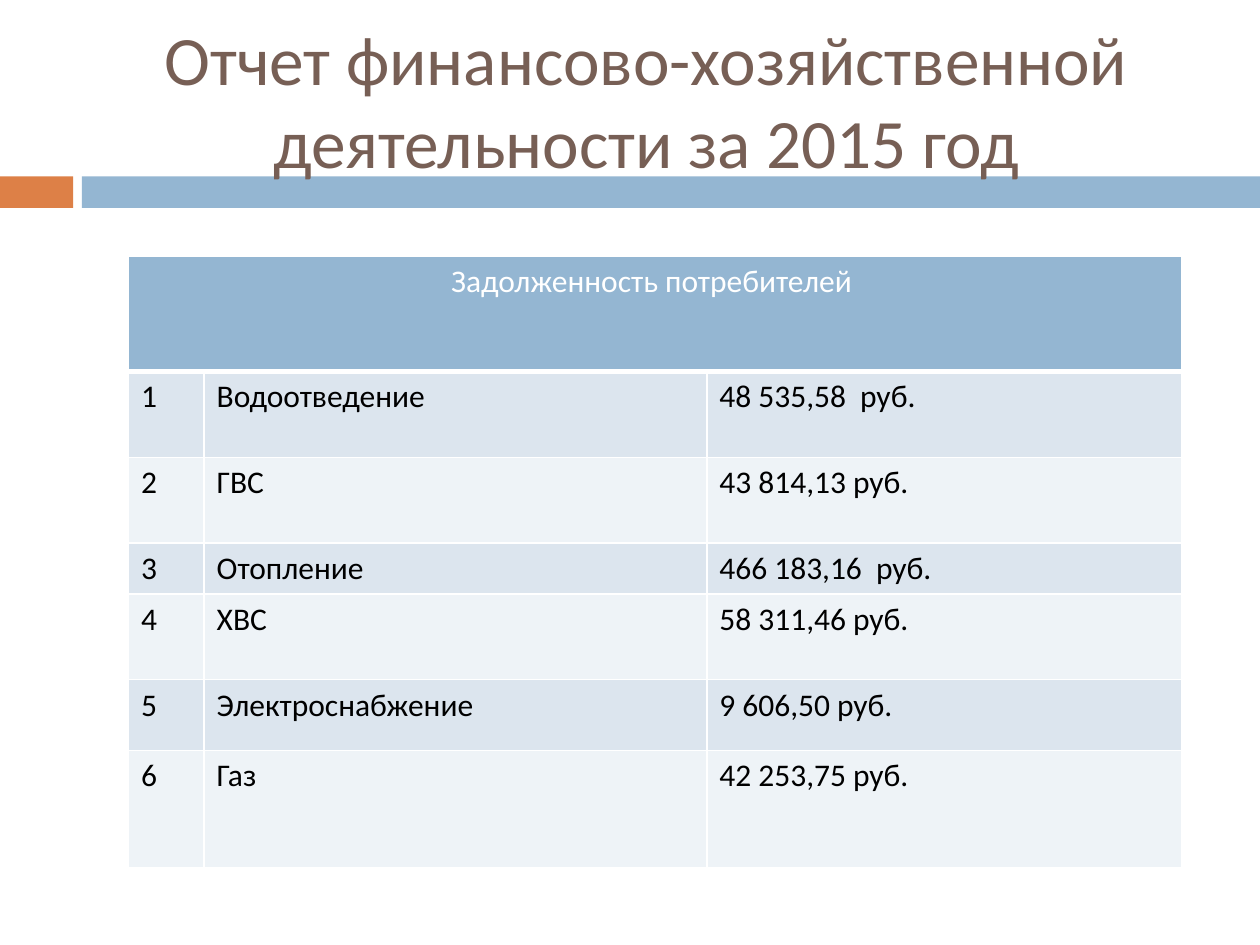
import lxml.etree
import pptx
import pptx.dml.color
import pptx.enum.shapes
import pptx.enum.text
import pptx.oxml.ns
import pptx.util

Inches = pptx.util.Inches
RGBColor = pptx.dml.color.RGBColor
ALIGN = pptx.enum.text.PP_ALIGN

ORANGE = RGBColor(0xDD, 0x80, 0x47)
BLUE = RGBColor(0x94, 0xB6, 0xD2)
BROWN = RGBColor(0x77, 0x5F, 0x55)
WHITE = RGBColor(0xFF, 0xFF, 0xFF)
BLACK = RGBColor(0x00, 0x00, 0x00)
BANDS = (RGBColor(0xDC, 0xE5, 0xEE), RGBColor(0xEE, 0xF3, 0xF7))

TITLE = "Отчет финансово-хозяйственной деятельности за 2015 год"
TABLE_HEADING = "Задолженность потребителей "
DEBTS = (
    ("Водоотведение", "48 535,58  руб."),
    ("ГВС", "43 814,13 руб."),
    ("Отопление", "466 183,16  руб."),
    ("ХВС", "58 311,46 руб."),
    ("Электроснабжение", "9 606,50 руб."),
    ("Газ", "42 253,75 руб."),
)
COLUMN_WIDTHS = (0.6, 3.99, 3.77)
ROW_HEIGHTS = (0.92, 0.68, 0.68, 0.33, 0.68, 0.56, 0.93)


class ReportSlide:
    font_name = "Calibri"
    title_size = 39.6
    table_size = 18

    def __init__(self, presentation):
        self.slide = presentation.slides.add_slide(presentation.slide_layouts[5])

    def set_text(self, text_frame, text, size, color, alignment):
        text_frame.text = text
        paragraph = text_frame.paragraphs[0]
        paragraph.alignment = alignment
        for run in paragraph.runs:
            run.font.name = self.font_name
            run.font.size = pptx.util.Pt(size)
            run.font.color.rgb = color

    def bar(self, left, top, width, height, color):
        shape = self.slide.shapes.add_shape(
            pptx.enum.shapes.MSO_SHAPE.RECTANGLE,
            Inches(left), Inches(top), Inches(width), Inches(height))
        shape.shadow.inherit = False
        shape.fill.solid()
        shape.fill.fore_color.rgb = color
        shape.line.fill.background()

    def title(self, text, left, top, width, height):
        title = self.slide.shapes.title
        title.left, title.top = Inches(left), Inches(top)
        title.width, title.height = Inches(width), Inches(height)
        text_frame = title.text_frame
        text_frame.word_wrap = True
        text_frame.auto_size = pptx.enum.text.MSO_AUTO_SIZE.NONE
        text_frame.vertical_anchor = pptx.enum.text.MSO_ANCHOR.MIDDLE
        self.set_text(text_frame, text, self.title_size, BROWN, ALIGN.CENTER)
        tree = self.slide.shapes.element
        tree.remove(title.element)
        tree.append(title.element)

    def style_cell(self, cell, fill, bottom_width):
        qn = pptx.oxml.ns.qn
        properties = cell._tc.get_or_add_tcPr()
        for side, width in (("L", 1), ("R", 1), ("T", 1), ("B", bottom_width)):
            line = lxml.etree.SubElement(
                properties, qn(f"a:ln{side}"), w=str(pptx.util.Pt(width)))
            solid = lxml.etree.SubElement(line, qn("a:solidFill"))
            lxml.etree.SubElement(solid, qn("a:srgbClr"), val=str(WHITE))
        cell.fill.solid()
        cell.fill.fore_color.rgb = fill

    def table(self, heading, records, left, top):
        table = self.slide.shapes.add_table(
            len(ROW_HEIGHTS), len(COLUMN_WIDTHS), Inches(left), Inches(top),
            Inches(sum(COLUMN_WIDTHS)), Inches(sum(ROW_HEIGHTS))).table
        for column, width in zip(table.columns, COLUMN_WIDTHS):
            column.width = Inches(width)
        for row, height in zip(table.rows, ROW_HEIGHTS):
            row.height = Inches(height)
        for cell in table.rows[0].cells:
            self.style_cell(cell, BLUE, 3)
        header = table.cell(0, 0)
        header.merge(table.cell(0, len(COLUMN_WIDTHS) - 1))
        self.set_text(header.text_frame, heading, self.table_size, WHITE, ALIGN.CENTER)
        for number, record in enumerate(records, 1):
            for cell, text in zip(table.rows[number].cells, (str(number), *record)):
                self.style_cell(cell, BANDS[(number - 1) % 2], 1)
                self.set_text(cell.text_frame, text, self.table_size, BLACK, ALIGN.LEFT)


def main():
    presentation = pptx.Presentation()
    presentation.slide_width = Inches(10)
    presentation.slide_height = Inches(7.5)
    report = ReportSlide(presentation)
    report.bar(0, 1.4, 0.58, 0.25, ORANGE)
    report.bar(0.65, 1.4, 9.35, 0.25, BLUE)
    report.title(TITLE, 0.67, 0.25, 8.92, 1.08)
    report.table(TABLE_HEADING, DEBTS, 1.02, 2.03)
    presentation.save("out.pptx")


if __name__ == "__main__":
    main()
